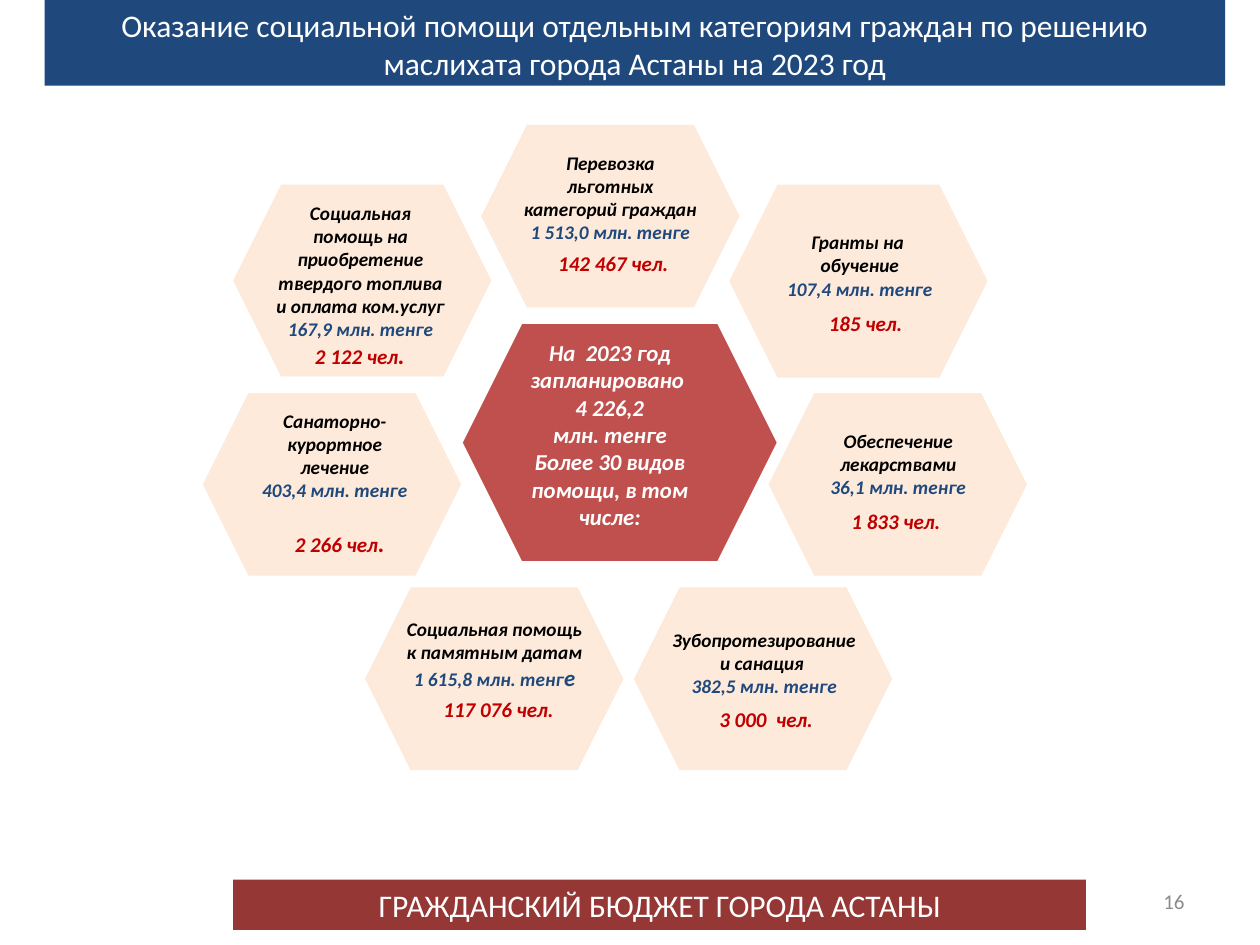
from pptx import Presentation
from pptx.dml.color import RGBColor
from pptx.enum.shapes import MSO_SHAPE
from pptx.enum.text import MSO_ANCHOR, PP_ALIGN
from pptx.util import Pt

HEXAGON, RECTANGLE = MSO_SHAPE.HEXAGON, MSO_SHAPE.RECTANGLE
TOP, MIDDLE = MSO_ANCHOR.TOP, MSO_ANCHOR.MIDDLE
CENTER, RIGHT = PP_ALIGN.CENTER, PP_ALIGN.RIGHT
TITLE_ONLY = 5
FONT = "Calibri"
COLORS = {
    "navy": "1F497D", "maroon": "953735", "red": "C0504D", "peach": "FDEADA",
    "white": "FFFFFF", "black": "000000", "crimson": "C00000", "gray": "8C8C8C",
}
HEX_WIDTH = 147.6

# Hexagon (left, top, height); label box; label lines; amount; people box; people
PROGRAMS = [
    ((133.2, 105.6, 109.6), (150.2, 111.6, 111.6, 87.1),
     ["Социальная помощь на приобретение твердого топлива и оплата ком.услуг"],
     ["167,9 млн. тенге"], (155.9, 190.8, 99.4, 24.2), ["2 122 чел", (".", 14)]),
    ((275, 71.3, 104.4), (291.3, 82.8, 115, 60.5),
     ["Перевозка льготных категорий граждан"],
     ["1 513,0 млн. тенге"], (297.6, 139.7, 105.8, 21.6), ["142 467 чел."]),
    ((416.7, 105.6, 110.2), (433.4, 128.2, 115.9, 47.5),
     ["Гранты на ", "обучение"],
     ["107,4 млн. тенге"], (456.5, 173.9, 76.3, 21.6), ["185 чел."]),
    ((115.9, 224.6, 104.4), (138.8, 230.4, 105.1, 60.5),
     ["Санаторно-курортное лечение"],
     ["403,4 млн. тенге"], (144.4, 298.1, 99.4, 24.2), ["2 266 чел", (".", 14)]),
    ((439.2, 224.6, 104.4), (450.7, 241.9, 125.3, 47.5),
     ["Обеспечение лекарствами"],
     ["36,1 млн. тенге"], (456.5, 287.3, 110.9, 21.6), ["1 833 чел."]),
    ((208.6, 335.7, 104.4), (223.9, 349.2, 117.4, 49.7),
     ["Социальная помощь к памятным датам"],
     ["1 615,8 млн. тенг", ("е", 13)], (235.2, 394.6, 99.4, 21.6), ["117 076 чел."]),
    ((362.2, 335.7, 104.4), (377, 355.2, 119.5, 47.5),
     ["Зубопротезирование и санация "],
     ["382,5 млн. тенге"], (388.1, 400.3, 99.4, 21.6), ["3 000  чел."]),
]


def color(name):
    return RGBColor.from_string(COLORS[name])


def place(shape, box):
    shape.left, shape.top, shape.width, shape.height = (Pt(value) for value in box)


def add_block(page, kind, box, fill):
    shape = page.shapes.add_shape(kind, *(Pt(value) for value in box))
    shape.shadow.inherit = False
    shape.fill.solid()
    shape.fill.fore_color.rgb = color(fill)
    shape.line.fill.background()


def write(frame, lines, size, emphasis=False, align=CENTER, anchor=TOP):
    """Fill a frame with (pieces, colour) lines; a piece is text or (text, size)."""
    frame.word_wrap = True
    frame.vertical_anchor = anchor
    for index, (pieces, ink) in enumerate(lines):
        paragraph = frame.add_paragraph() if index else frame.paragraphs[0]
        paragraph.alignment = align
        font = paragraph.font
        font.name, font.size = FONT, Pt(size)
        font.bold = font.italic = emphasis
        font.color.rgb = color(ink)
        for piece in pieces:
            span = paragraph.add_run()
            if isinstance(piece, tuple):
                span.text, span.font.size = piece[0], Pt(piece[1])
            else:
                span.text = piece


def add_text(page, box, lines, size, **style):
    shape = page.shapes.add_textbox(*(Pt(value) for value in box))
    write(shape.text_frame, lines, size, **style)


def add_title(page):
    title = page.shapes.title
    place(title, (25.5, 0, 674.6, 49))
    title.fill.solid()
    title.fill.fore_color.rgb = color("navy")
    text = ("Оказание социальной помощи отдельным категориям граждан "
            "по решению маслихата города Астаны на 2023 год")
    write(title.text_frame, [([text], "white")], 18, anchor=MIDDLE)
    title.text_frame.margin_top = Pt(4.6)


def add_footer(page):
    add_block(page, RECTANGLE, (133.2, 502.6, 487.4, 28.8), "maroon")
    add_text(page, (150.2, 502.6, 453.6, 28.8),
             [(["ГРАЖДАНСКИЙ БЮДЖЕТ ГОРОДА АСТАНЫ"], "white")], 18)
    add_text(page, (516.2, 500.4, 167.8, 28.8), [(["16"], "gray")], 12,
             align=RIGHT, anchor=MIDDLE)


def add_total(page):
    add_block(page, HEXAGON, (264.5, 185.2, 179.3, 135.4), "red")
    lines = ["На  2023 год запланировано ", "4 226,2", "млн. тенге",
             "Более 30 видов помощи, в том числе:"]
    add_text(page, (285.8, 190.1, 125.3, 133.2),
             [([line], "white") for line in lines], 13, emphasis=True)


def add_program(page, hexagon, label_box, label, amount, people_box, people):
    left, top, height = hexagon
    add_block(page, HEXAGON, (left, top, HEX_WIDTH, height), "peach")
    lines = [([line], "black") for line in label] + [(amount, "navy")]
    add_text(page, label_box, lines, 11, emphasis=True)
    add_text(page, people_box, [(people, "crimson")], 12, emphasis=True)


def main():
    deck = Presentation()
    deck.slide_width, deck.slide_height = Pt(720), Pt(540)
    page = deck.slides.add_slide(deck.slide_layouts[TITLE_ONLY])
    add_title(page)
    add_footer(page)
    add_total(page)
    for program in PROGRAMS:
        add_program(page, *program)
    deck.save("out.pptx")


if __name__ == "__main__":
    main()
